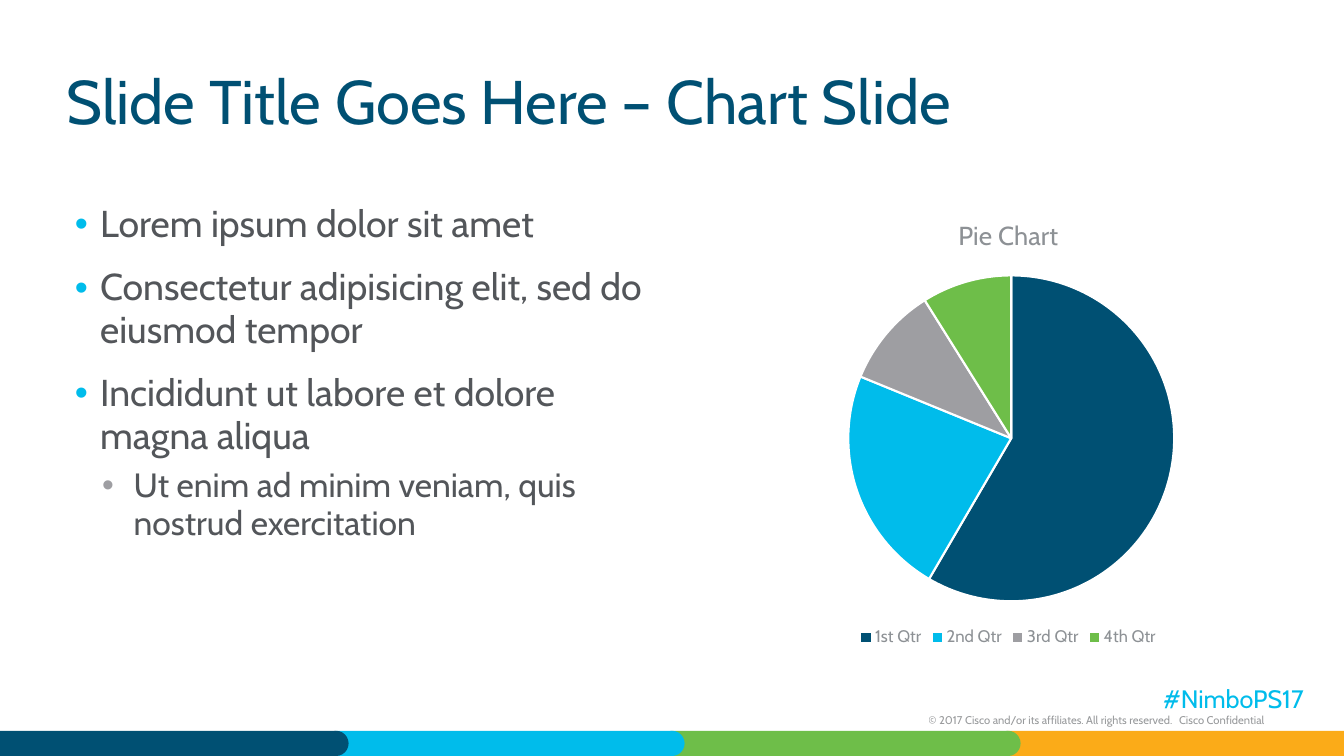
from typing import NamedTuple

from lxml.etree import SubElement
from pptx import Presentation
from pptx.chart.data import CategoryChartData
from pptx.dml.color import RGBColor
from pptx.enum.chart import XL_CHART_TYPE as Kind, XL_LEGEND_POSITION as Place
from pptx.enum.shapes import MSO_SHAPE as Form
from pptx.enum.text import MSO_ANCHOR as Anchor, MSO_AUTO_SIZE as Fit, PP_ALIGN as Align
from pptx.oxml import parse_xml
from pptx.oxml.ns import nsdecls, qn
from pptx.util import Pt

FACE = "Cabin"
NAVY, SKY, GREEN, GOLD = "005073", "00BCEB", "6EBE49", "FBAB18"
TEXT, GREY, MUTED = "53565A", "9E9EA2", "8D9195"
WIDE, HIGH = 960, 540
BAND, BAR = WIDE / 4, 18


class Box(NamedTuple):
    left: float
    top: float
    width: float
    height: float


class Level(NamedTuple):
    depth: int
    size: float
    before: float
    margin: float
    hang: float
    dot: str


class Item(NamedTuple):
    text: str
    level: Level


class Slice(NamedTuple):
    name: str
    value: int
    fill: str


MAIN = Level(0, 26.7, 14.8, 24, 18, SKY)
SUB = Level(1, 24, 6, 48, 22.5, GREY)
ITEMS = [
    Item("Lorem ipsum dolor sit amet", MAIN),
    Item("Consectetur adipisicing elit, sed do eiusmod tempor", MAIN),
    Item("Incididunt ut labore et dolore magna aliqua", MAIN),
    Item("Ut enim ad minim veniam, quis nostrud exercitation", SUB),
]
SLICES = [
    Slice("1st Qtr", 59, NAVY),
    Slice("2nd Qtr", 23, SKY),
    Slice("3rd Qtr", 10, GREY),
    Slice("4th Qtr", 9, GREEN),
]


def paint(obj, tone: str) -> None:
    """Colour a fill or a font."""
    if hasattr(obj, "solid"):
        obj.solid()
        obj.fore_color.rgb = RGBColor.from_string(tone)
    else:
        obj.color.rgb = RGBColor.from_string(tone)


def style(font, size: float, tone: str) -> None:
    font.name, font.size, font.bold = FACE, Pt(size), False
    paint(font, tone)


def write(para, text: str, size: float, tone: str):
    run = para.add_run()
    run.text = text
    style(run.font, size, tone)
    return run


def move(shape, box: Box) -> None:
    shape.left, shape.top, shape.width, shape.height = map(Pt, box)


def draw(slide, form: Form, box: Box, tone: str) -> None:
    shape = slide.shapes.add_shape(form, *map(Pt, box))
    shape.shadow.inherit = False
    paint(shape.fill, tone)
    shape.line.fill.background()


def add_bands(slide) -> None:
    """Draw from right to left, so each round end overlaps the next band."""
    top = HIGH - BAR
    for pos, tone in reversed(list(enumerate([NAVY, SKY, GREEN, GOLD]))):
        draw(slide, Form.RECTANGLE, Box(pos * BAND, top, BAND, BAR), tone)
        if tone != GOLD:
            end = (pos + 1) * BAND - BAR / 2
            draw(slide, Form.OVAL, Box(end, top, BAR, BAR), tone)


def add_text(slide, box: Box):
    frame = slide.shapes.add_textbox(*map(Pt, box)).text_frame
    frame.word_wrap = True
    return frame


def add_foot(slide) -> None:
    frame = add_text(slide, Box(656.6, 505.4, 300, 16.6))
    frame.vertical_anchor = Anchor.BOTTOM
    frame.margin_left = frame.margin_right = Pt(6.6)
    frame.margin_top = frame.margin_bottom = Pt(3)
    para = frame.paragraphs[0]
    tabs = SubElement(para._p.get_or_add_pPr(), qn("a:tabLst"))
    SubElement(tabs, qn("a:tab"), pos=str(Pt(179)), algn="l")
    line = "© 2017 Cisco and/or its affiliates. All rights reserved.\tCisco Confidential"
    run = write(para, line, 8, "535659")
    hue = run._r.find(".//" + qn("a:srgbClr"))
    SubElement(hue, qn("a:alpha"), val="60000")

    tag = add_text(slide, Box(823.7, 484.6, 118, 28.8))
    write(tag.paragraphs[0], "#NimboPS17", 18, SKY)


def set_title(slide) -> None:
    title = slide.shapes.title
    move(title, Box(40.3, 36, 880.6, 77))
    frame = title.text_frame
    frame.auto_size, frame.vertical_anchor = Fit.NONE, Anchor.MIDDLE
    para = frame.paragraphs[0]
    para.alignment, para.line_spacing = Align.LEFT, 0.9
    write(para, "Slide Title Goes Here – Chart Slide", 44, NAVY)


def set_list(slide) -> None:
    body = slide.placeholders[1]
    move(body, Box(40.3, 141.8, 440, 324))
    frame = body.text_frame
    frame.auto_size, frame.vertical_anchor = Fit.NONE, Anchor.TOP
    for pos, (text, level) in enumerate(ITEMS):
        para = frame.add_paragraph() if pos else frame.paragraphs[0]
        para.level, para.line_spacing = level.depth, 0.95
        para.space_before = Pt(level.before if pos else 0)
        props = para._p.get_or_add_pPr()
        props.set("marL", str(Pt(level.margin)))
        props.set("indent", str(-Pt(level.hang)))
        hue = SubElement(props, qn("a:buClr"))
        SubElement(hue, qn("a:srgbClr"), val=level.dot)
        SubElement(props, qn("a:buFont"), typeface="Arial")
        SubElement(props, qn("a:buChar"), char="•")
        write(para, text, level.size, TEXT)


def add_pie(slide) -> None:
    data = CategoryChartData()
    data.categories = [part.name for part in SLICES]
    data.add_series("Series 1", [part.value for part in SLICES])
    box = Box(514.8, 141.8, 411, 323.3)
    chart = slide.shapes.add_chart(Kind.PIE, *map(Pt, box), data).chart
    style(chart.font, 10, "535659")
    chart.has_title = True
    write(chart.chart_title.text_frame.paragraphs[0], "Pie Chart", 18.6, MUTED)
    chart.chart_title.include_in_layout = False
    chart.has_legend = True
    chart.legend.position = Place.BOTTOM
    chart.legend.include_in_layout = False
    style(chart.legend.font, 12, MUTED)
    plot = chart.plots[0]
    plot.vary_by_categories = True
    for pos, part in enumerate(SLICES):
        look = plot.series[0].points[pos].format
        paint(look.fill, part.fill)
        paint(look.line.fill, "FFFFFF")
        look.line.width = Pt(1.5)
    area = chart._chartSpace.find(".//" + qn("c:plotArea"))
    for old in area.findall(qn("c:layout")):
        area.remove(old)
    area.insert(0, parse_xml(
        f'<c:layout {nsdecls("c")}><c:manualLayout><c:layoutTarget val="inner"/>'
        '<c:xMode val="edge"/><c:yMode val="edge"/><c:x val="0.22"/><c:y val="0.17"/>'
        '<c:w val="0.57"/><c:h val="0.72"/></c:manualLayout></c:layout>'))


def main() -> None:
    deck = Presentation()
    deck.slide_width, deck.slide_height = Pt(WIDE), Pt(HIGH)
    slide = deck.slides.add_slide(deck.slide_layouts[1])
    add_bands(slide)
    add_foot(slide)
    set_list(slide)
    set_title(slide)
    add_pie(slide)
    deck.save("out.pptx")


if __name__ == "__main__":
    main()
